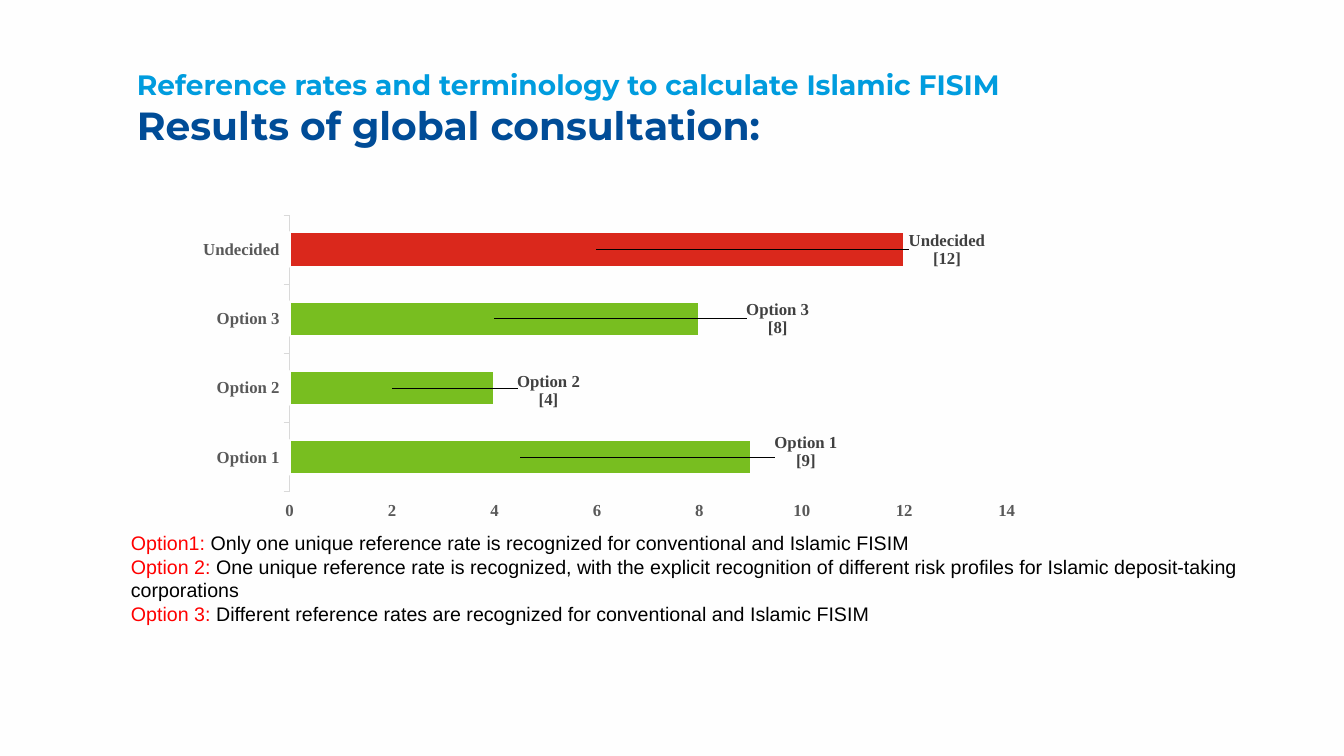
from lxml import etree
from pptx import Presentation
from pptx.chart.data import CategoryChartData
from pptx.dml.color import RGBColor
from pptx.enum.chart import XL_CHART_TYPE as ChartType, XL_LABEL_POSITION as LabelPosition
from pptx.enum.chart import XL_TICK_MARK as TickMark
from pptx.enum.text import MSO_ANCHOR as Anchor, MSO_AUTO_SIZE as AutoSize, PP_ALIGN as Align
from pptx.oxml import parse_xml
from pptx.oxml.ns import nsdecls, qn
from pptx.util import Cm, Pt

SKY = RGBColor(0x00, 0x9C, 0xDE)
NAVY = RGBColor(0x00, 0x4C, 0x97)
GREEN = RGBColor(0x78, 0xBE, 0x20)
BAR_RED = RGBColor(0xDA, 0x28, 0x1C)
RED = RGBColor(0xFF, 0x00, 0x00)
BLACK = RGBColor(0x00, 0x00, 0x00)
AXIS_GRAY = RGBColor(0x59, 0x59, 0x59)
LABEL_GRAY = RGBColor(0x40, 0x40, 0x40)
LINE_GRAY = RGBColor(0xD9, 0xD9, 0xD9)
OFF_WHITE = RGBColor(0xFE, 0xFE, 0xFE)

# category, value, bar colour, label shift from the bar centre (share of chart size)
RESULTS = [
    ("Option 1", 9, GREEN, 0.338, -0.017),
    ("Option 2", 4, GREEN, 0.185, 0.009),
    ("Option 3", 8, GREEN, 0.335, 0),
    ("Undecided", 12, BAR_RED, 0.414, 0),
]
OPTIONS = [
    ("Option1:", " Only one unique reference rate is recognized for conventional and Islamic FISIM"),
    ("Option 2:", " One unique reference rate is recognized, with the explicit recognition of "
                  "different risk profiles for Islamic deposit-taking corporations"),
    ("Option 3:", " Different reference rates are recognized for conventional and Islamic FISIM"),
]


def format_font(font, name, size, color, bold):
    font.name, font.size, font.bold = name, Pt(size), bold
    font.color.rgb = color


def manual_layout(x, y, extra=""):
    return parse_xml(
        f'<c:layout {nsdecls("c")}><c:manualLayout>{extra}'
        f'<c:x val="{x}"/><c:y val="{y}"/></c:manualLayout></c:layout>')


presentation = Presentation()
presentation.slide_width, presentation.slide_height = Cm(33.87), Cm(19.05)
slide = presentation.slides.add_slide(presentation.slide_layouts[5])
slide.background.fill.solid()
slide.background.fill.fore_color.rgb = OFF_WHITE

# Title
title = slide.shapes.title
title.left, title.top, title.width, title.height = Cm(3.45), Cm(1.37), Cm(26.97), Cm(2.72)
frame = title.text_frame
frame.text = ("Reference rates and terminology to calculate Islamic FISIM\v"
              "Results of global consultation:")
frame.margin_left = frame.margin_right = frame.margin_top = frame.margin_bottom = 0
frame.vertical_anchor = Anchor.MIDDLE
frame.auto_size = AutoSize.NONE
paragraph = frame.paragraphs[0]
paragraph.alignment = Align.LEFT
for run, size, color in zip(paragraph.runs, (20, 28), (SKY, NAVY)):
    format_font(run.font, "Montserrat", size, color, True)

# Bar chart
chart_data = CategoryChartData()
chart_data.categories = [result[0] for result in RESULTS]
chart_data.add_series("Series 1", [result[1] for result in RESULTS])
chart = slide.shapes.add_chart(ChartType.BAR_CLUSTERED, Cm(4.7), Cm(5.26),
                               Cm(21.31), Cm(8), chart_data).chart
chart.has_legend = False
chart.has_title = False
format_font(chart.font, "Times New Roman", 12, BLACK, True)

for axis in (chart.category_axis, chart.value_axis):
    axis.has_major_gridlines = False
    axis.major_tick_mark = TickMark.OUTSIDE
    axis.minor_tick_mark = TickMark.NONE
    format_font(axis.tick_labels.font, "Times New Roman", 12, AXIS_GRAY, True)
chart.category_axis.format.line.color.rgb = LINE_GRAY
chart.category_axis.format.line.width = Pt(0.75)
chart.value_axis.format.line.fill.background()
chart.value_axis.minimum_scale = 0
chart.value_axis.maximum_scale = 14
chart.value_axis.major_unit = 2

plot_area = chart.plots[0]._element.getparent()
for old_layout in plot_area.findall(qn("c:layout")):
    plot_area.remove(old_layout)
plot_layout = manual_layout(0.122, 0.02, '<c:layoutTarget val="inner"/>'
                            '<c:xMode val="edge"/><c:yMode val="edge"/>')
for tag, share in (("c:w", 0.848), ("c:h", 0.872)):
    etree.SubElement(plot_layout[0], qn(tag)).set("val", str(share))
plot_area.insert(0, plot_layout)

plot = chart.plots[0]
plot.gap_width = 100
plot.vary_by_categories = False
series = plot.series[0]
series.invert_if_negative = False
series.format.fill.solid()
series.format.fill.fore_color.rgb = GREEN
labels = series.data_labels
labels.show_value = labels.show_category_name = True
labels.number_format = '"["0"]"'
labels.number_format_is_linked = False
labels.position = LabelPosition.CENTER
format_font(labels.font, "Times New Roman", 12, LABEL_GRAY, True)

for index, (category, value, color, shift_x, shift_y) in enumerate(RESULTS):
    point = series.points[index]
    point.format.fill.solid()
    point.format.fill.fore_color.rgb = color
    point.format.line.color.rgb = OFF_WHITE
    point.format.line.width = Pt(1.5)
    point.data_label.position = LabelPosition.CENTER
    format_font(point.data_label.font, "Times New Roman", 12, LABEL_GRAY, True)

for label, result in zip(series._element.iter(qn("c:dLbl")), RESULTS):
    label_index = label.find(qn("c:idx"))
    label_index.addnext(parse_xml(
        f'<c:numFmt {nsdecls("c")} formatCode="&quot;[&quot;0&quot;]&quot;" sourceLinked="0"/>'))
    label_index.addnext(manual_layout(*result[3:]))
    label.find(qn("c:showCatName")).set("val", "1")
    etree.SubElement(label, qn("c:separator")).text = "\n"

# Explanation of the options
text_box = slide.shapes.add_textbox(Cm(0.51), Cm(13.26), Cm(32.31), Cm(2.64))
frame = text_box.text_frame
frame.word_wrap = True
frame.auto_size = AutoSize.SHAPE_TO_FIT_TEXT
for index, (name, description) in enumerate(OPTIONS):
    paragraph = frame.add_paragraph() if index else frame.paragraphs[0]
    paragraph.level = 2
    properties = paragraph._p.get_or_add_pPr()
    properties.set("marL", str(Cm(2.54)))
    properties.set("indent", "0")
    for text, color in ((name, RED), (description, BLACK)):
        run = paragraph.add_run()
        run.text = text
        format_font(run.font, "Arial", 14, color, False)

presentation.save("out.pptx")
